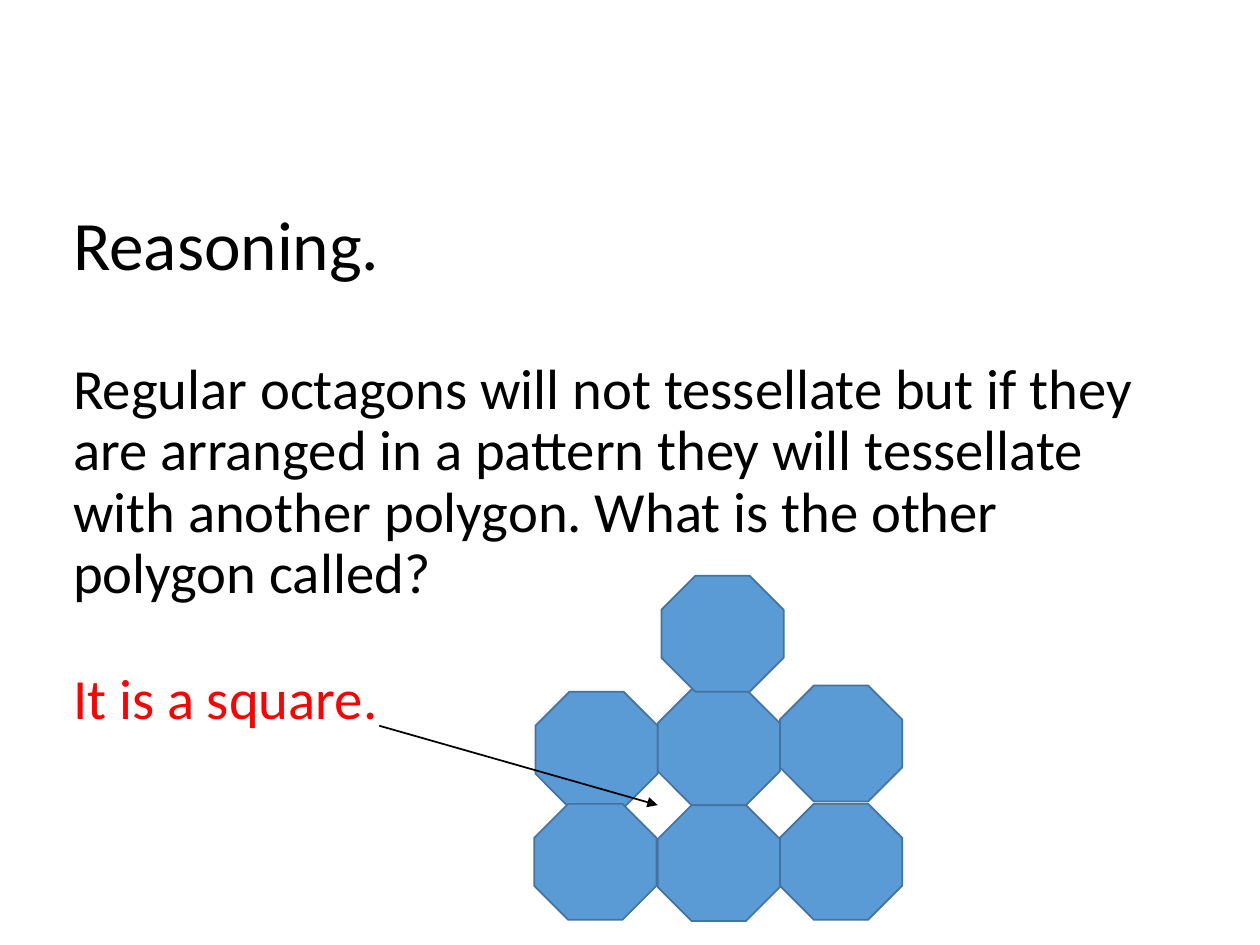
from lxml.etree import SubElement
from pptx import Presentation
from pptx.dml.color import RGBColor
from pptx.enum.shapes import MSO_CONNECTOR as Connector, MSO_SHAPE as Shape
from pptx.enum.text import MSO_ANCHOR as Anchor, MSO_AUTO_SIZE as AutoSize, PP_ALIGN as Align
from pptx.oxml.ns import qn
from pptx.util import Inches, Pt

BLACK = RGBColor(0x00, 0x00, 0x00)
RED = RGBColor(0xFF, 0x00, 0x00)
BLUE = RGBColor(0x5B, 0x9B, 0xD5)
EDGE = RGBColor(0x43, 0x73, 0x9E)

TEXT = [
    ("Reasoning.", 39.6, BLACK, 0),
    ("Regular octagons will not tessellate but if they are arranged in a pattern "
     "they will tessellate with another polygon. What is the other polygon called?",
     32.4, BLACK, 43),
    ("It is a square.", 32.4, RED, 37),
]
OCTAGONS = [(4.25, 5.49), (5.22, 5.47), (5.22, 6.39), (6.19, 6.38),
            (6.19, 5.44), (5.25, 4.57), (4.24, 6.38)]


class SlideBuilder:
    font_name = "Calibri"
    line_width = Pt(1)
    octagon_size = Inches(0.97), Inches(0.92)

    def __init__(self, page):
        self.page = page

    def title(self, left, top, width, height, paragraphs):
        box = self.page.shapes.title
        box.left, box.top = Inches(left), Inches(top)
        box.width, box.height = Inches(width), Inches(height)
        frame = box.text_frame
        frame.word_wrap = True
        frame.auto_size = AutoSize.NONE
        frame.vertical_anchor = Anchor.TOP
        frame.text = "\n".join(text for text, *_ in paragraphs)
        for para, (_, size, color, gap) in zip(frame.paragraphs, paragraphs):
            para.alignment = Align.LEFT
            para.line_spacing = 0.9
            para.space_before = Pt(gap)
            para.font.name = self.font_name
            para.font.size = Pt(size)
            para.font.color.rgb = color

    def octagon(self, left, top):
        tile = self.page.shapes.add_shape(
            Shape.OCTAGON, Inches(left), Inches(top), *self.octagon_size)
        tile.shadow.inherit = False
        tile.fill.solid()
        tile.fill.fore_color.rgb = BLUE
        tile.line.color.rgb = EDGE
        tile.line.width = self.line_width

    def arrow(self, start, end):
        arrow = self.page.shapes.add_connector(
            Connector.STRAIGHT, *map(Inches, start + end))
        arrow.line.color.rgb = BLACK
        arrow.line.width = self.line_width
        SubElement(arrow.line._get_or_add_ln(), qn("a:tailEnd"), type="triangle")
        SubElement(arrow._element.spPr, qn("a:effectLst"))


def main():
    deck = Presentation()
    deck.slide_width, deck.slide_height = Inches(10), Inches(7.5)
    title_only = deck.slide_layouts[5]
    builder = SlideBuilder(deck.slides.add_slide(title_only))
    builder.title(0.48, 1.62, 8.62, 4.3, TEXT)
    for left, top in OCTAGONS:
        builder.octagon(left, top)
    builder.arrow((3.01, 5.76), (5.22, 6.39))
    deck.save("out.pptx")


if __name__ == "__main__":
    main()
